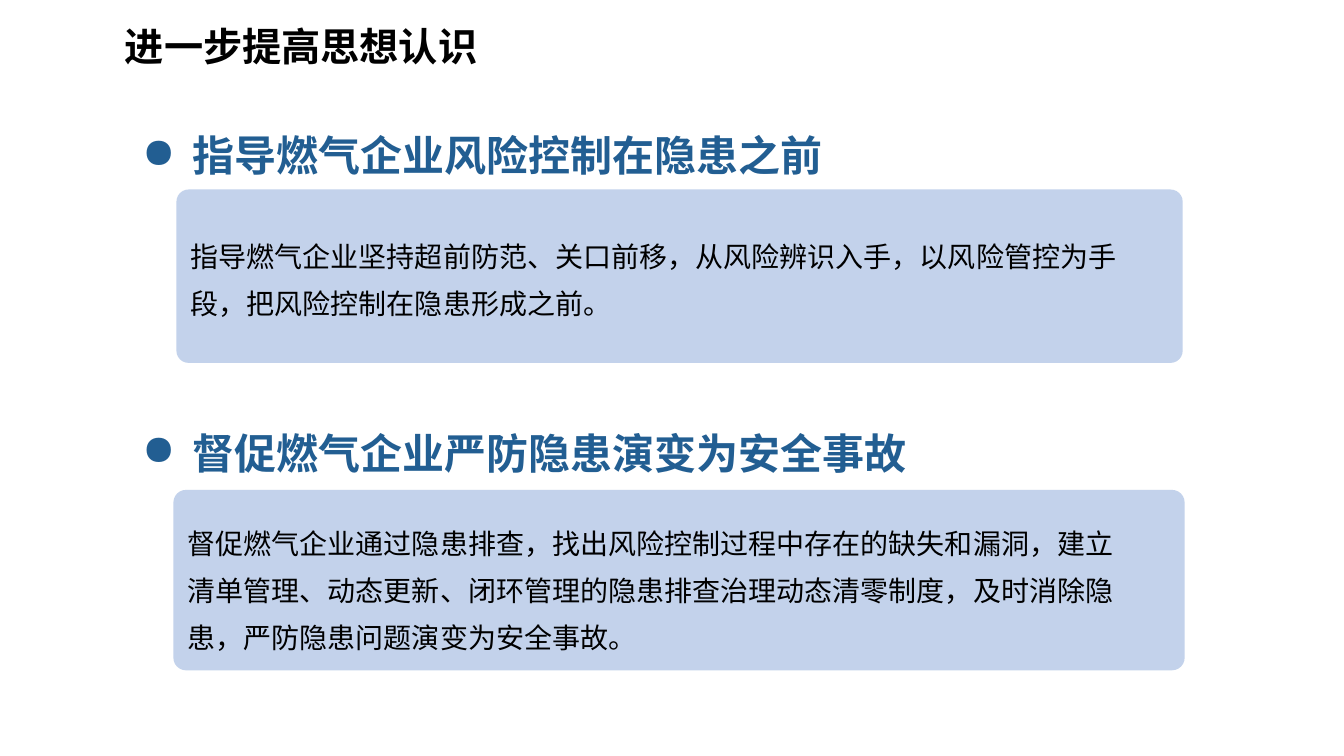
from lxml import etree
from pptx import Presentation
from pptx.dml.color import RGBColor
from pptx.enum import shapes, text
from pptx.oxml.ns import qn
from pptx.util import Inches, Pt

TITLE = ("进一步提高思想认识", (1.14, 0.17, 3.75, 0.57))

# Each point: heading and its box, panel box, body text and its box
POINTS = [
    dict(head="指导燃气企业风险控制在隐患之前",
         head_at=(1.27, 0.94, 7.35, 1),
         panel=(1.75, 1.88, 9.98, 1.72),
         body="指导燃气企业坚持超前防范、关口前移，从风险辨识入手，"
              "以风险管控为手段，把风险控制在隐患形成之前。",
         body_at=(1.75, 2.1, 9.39, 1.21)),
    dict(head="督促燃气企业严防隐患演变为安全事故",
         head_at=(1.27, 3.89, 8.35, 1),
         panel=(1.72, 4.86, 10.03, 1.79),
         body="督促燃气企业通过隐患排查，找出风险控制过程中存在的缺失和漏洞，"
              "建立清单管理、动态更新、闭环管理的隐患排查治理动态清零制度，"
              "及时消除隐患，严防隐患问题演变为安全事故。",
         body_at=(1.72, 4.95, 9.39, 1.21)),
]

THEME = dict(font="Noto Sans CJK SC", ink="000000", blue="225E92",
             panel="B4C7E7", alpha=80, title=28, head=30, body=20)
PAD = (0.14, 0.14, 0.06, 0.14)
INDENT = 0.5


def add_bullet(para):
    props = para._p.get_or_add_pPr()
    props.set("marL", str(Inches(INDENT)))
    props.set("indent", str(-Inches(INDENT)))
    etree.SubElement(props, qn("a:buChar")).set("char", "●")


def add_text(slide, words, at, size, color=THEME["ink"], bold=False,
             pad=None, spacing=None, middle=False, bullet=False):
    frame = slide.shapes.add_textbox(*map(Inches, at)).text_frame
    frame.word_wrap = True
    if pad:
        (frame.margin_left, frame.margin_top,
         frame.margin_right, frame.margin_bottom) = map(Inches, pad)
    if middle:
        frame.vertical_anchor = text.MSO_ANCHOR.MIDDLE
    para = frame.paragraphs[0]
    if bullet:
        add_bullet(para)
    if spacing:
        para.line_spacing = spacing
    run = para.add_run()
    run.text = words
    font = run.font
    font.size, font.bold, font.name = Pt(size), bold, THEME["font"]
    font.color.rgb = RGBColor.from_string(color)
    # East Asian text takes its own typeface entry
    east = etree.SubElement(run._r.get_or_add_rPr(), qn("a:ea"))
    east.set("typeface", THEME["font"])
    return frame


def add_panel(slide, at):
    panel = slide.shapes.add_shape(
        shapes.MSO_SHAPE.ROUNDED_RECTANGLE, *map(Inches, at))
    panel.adjustments[0] = 0.07
    panel.shadow.inherit = False
    panel.line.fill.background()
    panel.fill.solid()
    panel.fill.fore_color.rgb = RGBColor.from_string(THEME["panel"])
    color = panel.fill._xPr.find(".//" + qn("a:srgbClr"))
    etree.SubElement(color, qn("a:alpha")).set(
        "val", str(THEME["alpha"] * 1000))


def main():
    deck = Presentation()
    deck.slide_width, deck.slide_height = Inches(13.33), Inches(7.5)
    slide = deck.slides.add_slide(deck.slide_layouts[6])
    for point in POINTS:
        add_text(slide, point["head"], point["head_at"], THEME["head"],
                 color=THEME["blue"], bold=True, pad=PAD, spacing=1.4,
                 middle=True, bullet=True)
        add_panel(slide, point["panel"])
        add_text(slide, point["body"], point["body_at"], THEME["body"],
                 pad=PAD, spacing=1.4)
    title = add_text(slide, *TITLE, THEME["title"], bold=True)
    title.auto_size = text.MSO_AUTO_SIZE.SHAPE_TO_FIT_TEXT
    deck.save("out.pptx")


if __name__ == "__main__":
    main()
